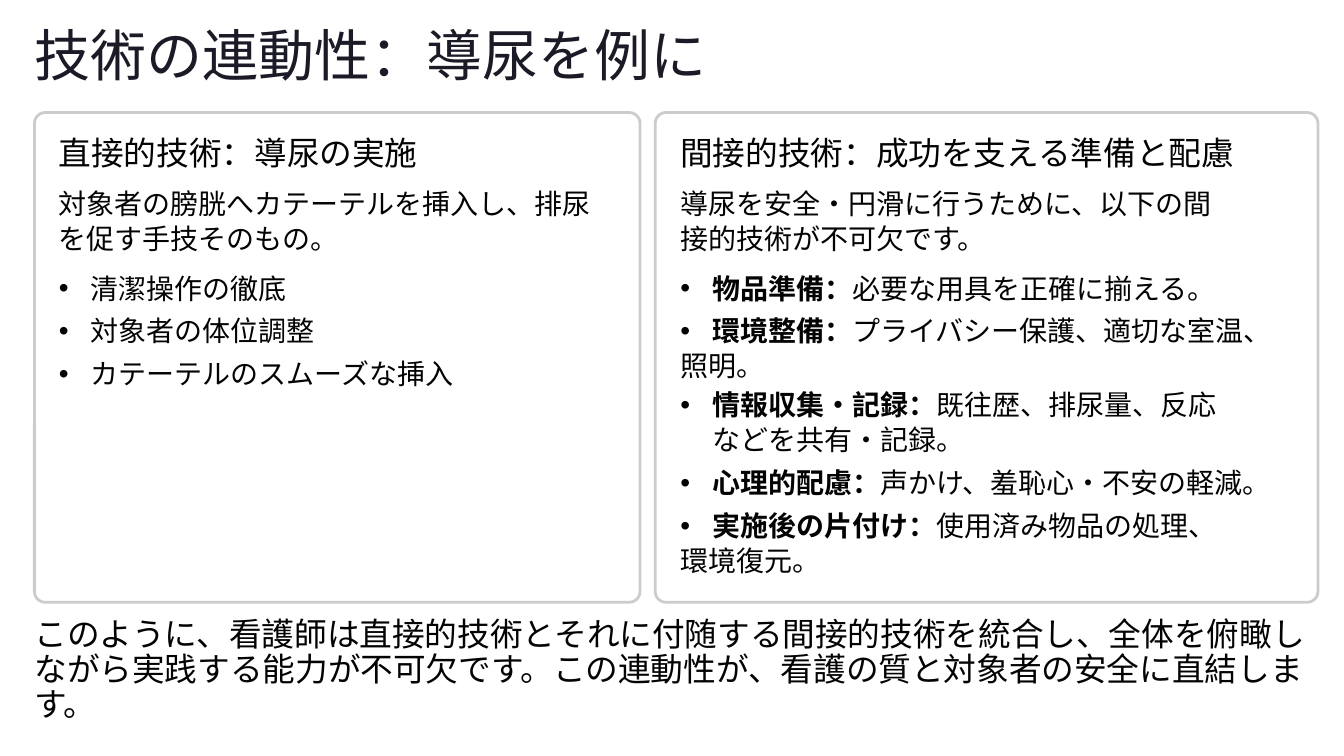
from lxml.etree import SubElement
from pptx import Presentation
from pptx.dml.color import RGBColor
from pptx.enum.shapes import MSO_SHAPE
from pptx.enum.text import MSO_ANCHOR, MSO_AUTO_SIZE, PP_ALIGN
from pptx.oxml.ns import qn
from pptx.util import Inches, Pt

NAVY = RGBColor(0x1B, 0x1B, 0x27)
INK = RGBColor(0x03, 0x03, 0x03)
GREY = RGBColor(0xCC, 0xCC, 0xCC)
WHITE = RGBColor(0xFF, 0xFF, 0xFF)


class Deck:
    head, body = "Inter", "Lato"

    def __init__(self):
        self.prs = Presentation()
        self.prs.slide_width, self.prs.slide_height = Inches(16), Inches(9)
        self.slide = self.prs.slides.add_slide(self.prs.slide_layouts[5])

    def frame(self, shape, wrap):
        tf = shape.text_frame
        tf.margin_left = tf.margin_top = tf.margin_right = tf.margin_bottom = 0
        tf.auto_size = MSO_AUTO_SIZE.NONE
        tf.vertical_anchor = MSO_ANCHOR.TOP
        tf.word_wrap = wrap
        return tf

    def run(self, para, text, size, font, color=INK, bold=False):
        run = para.add_run()
        run.text = text
        run.font.size, run.font.name = Pt(size), font
        run.font.bold = bold
        run.font.color.rgb = color

    def title(self, text, x, y, w, h):
        shape = self.slide.shapes.title
        shape.left, shape.top, shape.width, shape.height = map(Inches, (x, y, w, h))
        para = self.frame(shape, True).paragraphs[0]
        para.alignment = PP_ALIGN.LEFT
        para.line_spacing = Pt(59)
        self.run(para, text, 48, self.head, NAVY)

    def text(self, text, x, y, w, h, size=24, font=body, gap=30, wrap=True):
        box = self.slide.shapes.add_textbox(*map(Inches, (x, y, w, h)))
        para = self.frame(box, wrap).paragraphs[0]
        para.line_spacing = Pt(gap)
        self.run(para, text, size, font)

    def item(self, label, text, rest, x, y, w, h, wrap):
        box = self.slide.shapes.add_textbox(*map(Inches, (x, y, w, h)))
        tf = self.frame(box, wrap)
        para = tf.paragraphs[0]
        props = para._p.get_or_add_pPr()
        props.set("marL", str(Inches(0.38)))
        props.set("indent", str(Inches(-0.38)))
        SubElement(props, qn("a:buFont")).set("typeface", "Arial")
        SubElement(props, qn("a:buChar")).set("char", "•")
        para.line_spacing = Pt(30)
        if label:
            self.run(para, label, 24, self.body, bold=True)
        self.run(para, text, 24, self.body)
        if rest:
            para = tf.add_paragraph()
            para.line_spacing = Pt(30)
            self.run(para, rest, 24, self.body)

    def card(self, x, y, w, h):
        shape = self.slide.shapes.add_shape(
            MSO_SHAPE.ROUNDED_RECTANGLE, *map(Inches, (x, y, w, h)))
        shape.adjustments[0] = 0.022
        shape.shadow.inherit = False
        shape.fill.solid()
        shape.fill.fore_color.rgb = WHITE
        tint = shape.fill._xPr.find(qn("a:solidFill"))[0]
        SubElement(tint, qn("a:alpha")).set("val", "95000")
        shape.line.color.rgb = GREY
        shape.line.width = Pt(2.4)


# Card: left, width, text left, heading width, heading, lead, items
# Item: top, label, text, second line, wrap
CARDS = [
    (0.41, 7.21, 0.7, 3.66, "直接的技術：導尿の実施",
     "対象者の膀胱へカテーテルを挿入し、排尿を促す手技そのもの。",
     [(3.21, "", "清潔操作の徹底", "", False),
      (3.72, "", "対象者の体位調整", "", False),
      (4.23, "", "カテーテルのスムーズな挿入", "", False)]),
    (7.8, 7.89, 8.1, 5.64, "間接的技術：成功を支える準備と配慮",
     "導尿を安全・円滑に行うために、以下の間接的技術が不可欠です。",
     [(3.21, "物品準備：", "必要な用具を正確に揃える。", "", False),
      (3.72, "環境整備：", "プライバシー保護、適切な室温、", "照明。", False),
      (4.6, "情報収集・記録：", "既往歴、排尿量、反応などを共有・記録。", "", True),
      (5.53, "心理的配慮：", "声かけ、羞恥心・不安の軽減。", "", False),
      (6.04, "実施後の片付け：", "使用済み物品の処理、", "環境復元。", False)]),
]


def main():
    deck = Deck()
    deck.title("技術の連動性：導尿を例に", 0.41, 0.22, 8.6, 0.82)

    # Two cards with heading, lead and bullets
    for left, width, x, span, head, lead, items in CARDS:
        deck.card(left, 1.34, width, 5.83)
        deck.text(head, x, 1.64, span, 0.47, 28, deck.head, 29.5, False)
        deck.text(lead, x, 2.21, 6.61, 0.97)
        for top, label, text, rest, wrap in items:
            deck.item(label, text, rest, x, top, 6.61, 0.97 if wrap else 0.49, wrap)

    # Closing statement
    deck.text("このように、看護師は直接的技術とそれに付随する間接的技術を統合し、"
              "全体を俯瞰しながら実践する能力が不可欠です。"
              "この連動性が、看護の質と対象者の安全に直結します。",
              0.41, 7.36, 15.19, 0.84, 28)
    deck.prs.save("out.pptx")


if __name__ == "__main__":
    main()
